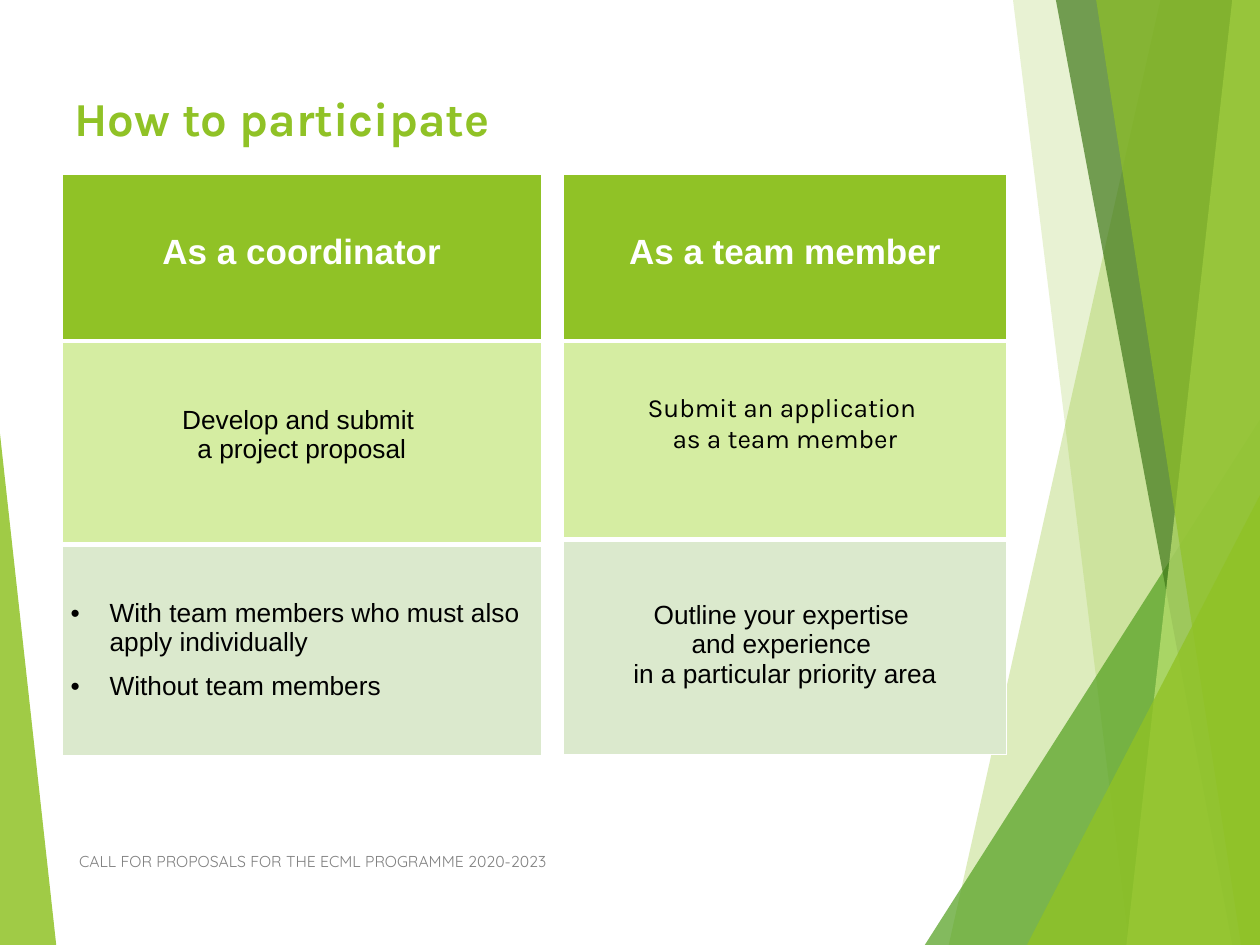
from dataclasses import dataclass

from lxml import etree
from pptx import Presentation
from pptx.dml.color import RGBColor
from pptx.enum.shapes import MSO_SHAPE
from pptx.enum.text import MSO_ANCHOR, MSO_AUTO_SIZE, PP_ALIGN
from pptx.oxml.ns import qn
from pptx.util import Inches, Pt

TRIANGLE = MSO_SHAPE.ISOSCELES_TRIANGLE
TOP, MIDDLE = MSO_ANCHOR.TOP, MSO_ANCHOR.MIDDLE
LEFT, CENTER = PP_ALIGN.LEFT, PP_ALIGN.CENTER
NO_AUTOFIT = MSO_AUTO_SIZE.NONE

WIDTH, HEIGHT = Inches(10), Inches(7.5)
TITLE_ONLY = 5
COLORS = {
    "lime": "90C226", "green": "54A021", "forest": "3F7819", "pale": "C0E474",
    "light": "D5EDA2", "mist": "DBE9CD", "white": "FFFFFF", "black": "000000",
    "gray": "808080",
}


@dataclass
class Band:
    """Strip from a slanted left edge to the right side, in percent of the slide."""
    top_x: float
    bottom_x: float
    color: str
    opacity: int


@dataclass
class Wedge:
    """Right triangle, in percent of the slide; apex is 0 (left) or 1 (right)."""
    left: float
    top: float
    width: float
    height: float
    apex: int
    color: str
    opacity: int


@dataclass
class Cell:
    paragraphs: list[str]
    fill: str
    font: str = "Arial"
    size: int = 15
    color: str = "black"
    bold: bool = False
    anchor: MSO_ANCHOR = MIDDLE
    margins: tuple[float, float] = (0.04, 0.04)  # top and bottom, inches
    bottom_line: float = 3
    bulleted: bool = False


@dataclass
class Column:
    left: float
    width: float
    header: str
    heights: tuple[float, float]
    cells: list[Cell]


BACKDROP = [
    Band(92.1, 75.3, "lime", 30),
    Band(80.4, 89.6, "lime", 20),
    Wedge(73.4, 44.4, 26.6, 55.6, 1, "green", 72),
    Band(83.8, 97.8, "forest", 70),
    Band(97.8, 89.4, "pale", 70),
    Band(87, 98.5, "lime", 65),
    Wedge(81.5, 52.4, 18.5, 47.6, 1, "lime", 80),
    Wedge(0, 45.87, 4.6, 55.73, 0, "lime", 85),
]
HEADER_TOP, HEADER_HEIGHT, BODY_TOP = 18.4, 17.73, 36.27
COLUMNS = [
    Column(4.9, 38.1, "As a coordinator", (21.33, 22.4), [
        Cell(["Develop and submit \na project proposal"], "light", margins=(0.04, 0.18)),
        Cell(["With team members who must also apply individually",
              "Without team members"], "mist", bottom_line=1, bulleted=True),
    ]),
    Column(44.7, 35.2, "As a team member", (20.8, 22.8), [
        Cell(["Submit an application \nas a team member"], "light", font="Karla",
             anchor=TOP, margins=(0.4, 0.04)),
        Cell(["Outline your expertise \nand experience \nin a particular priority area"],
             "mist", anchor=TOP, margins=(0.49, 0.04), bottom_line=1),
    ]),
]


def across(percent: float) -> int:
    return round(WIDTH * percent / 100)


def down(percent: float) -> int:
    return round(HEIGHT * percent / 100)


def rgb(name: str) -> RGBColor:
    return RGBColor.from_string(COLORS[name])


def style_font(font, name: str, size: float, color: str, bold: bool = False) -> None:
    font.name, font.size, font.bold = name, Pt(size), bold
    font.color.rgb = rgb(color)


def draw_backdrop_part(page, part: Band | Wedge) -> None:
    if isinstance(part, Band):
        builder = page.shapes.build_freeform(across(part.top_x), 0)
        builder.add_line_segments(
            [(WIDTH, 0), (WIDTH, HEIGHT), (across(part.bottom_x), HEIGHT)], close=True)
        shape = builder.convert_to_shape()
    else:
        shape = page.shapes.add_shape(TRIANGLE, across(part.left), down(part.top),
                                      across(part.width), down(part.height))
        shape.adjustments[0] = part.apex
    shape.shadow.inherit = False
    shape.line.fill.background()
    shape.fill.solid()
    shape.fill.fore_color.rgb = rgb(part.color)
    color = shape.fill._xPr.find(qn("a:solidFill"))[0]
    etree.SubElement(color, qn("a:alpha"), val=str(part.opacity * 1000))


def add_bullet(para) -> None:
    properties = para._p.get_or_add_pPr()
    properties.set("marL", str(Inches(0.31)))
    properties.set("indent", str(-Inches(0.31)))
    etree.SubElement(properties, qn("a:buFont"), typeface="Arial")
    etree.SubElement(properties, qn("a:buChar"), char="•")


def set_borders(table_cell, bottom_line: float) -> None:
    properties = table_cell._tc.get_or_add_tcPr()
    widths = {"lnL": 1, "lnR": 1, "lnT": 1, "lnB": bottom_line}
    for index, (tag, points) in enumerate(widths.items()):
        line = etree.Element(qn(f"a:{tag}"), w=str(Pt(points)))
        fill = etree.SubElement(line, qn("a:solidFill"))
        etree.SubElement(fill, qn("a:srgbClr"), val=COLORS["white"])
        properties.insert(index, line)


def fill_cell(table_cell, cell: Cell) -> None:
    table_cell.fill.solid()
    table_cell.fill.fore_color.rgb = rgb(cell.fill)
    table_cell.vertical_anchor = cell.anchor
    table_cell.margin_left = table_cell.margin_right = Inches(0.07)
    table_cell.margin_top, table_cell.margin_bottom = map(Inches, cell.margins)
    set_borders(table_cell, cell.bottom_line)
    frame = table_cell.text_frame
    for index, text in enumerate(cell.paragraphs):
        para = frame.add_paragraph() if index else frame.paragraphs[0]
        para.alignment = LEFT if cell.bulleted else CENTER
        if cell.bulleted:
            add_bullet(para)
            para.line_spacing = 1.5 if index else 1.0
        for number, line in enumerate(text.split("\n")):
            if number:
                para.add_line_break()
            span = para.add_run()
            span.text = line
            style_font(span.font, cell.font, cell.size, cell.color, cell.bold)


def draw_table(page, column: Column, top: float, heights, cells: list[Cell]) -> None:
    table = page.shapes.add_table(len(cells), 1, across(column.left), down(top),
                                  across(column.width), down(sum(heights))).table
    table.first_row = table.horz_banding = False
    for index, (height, cell) in enumerate(zip(heights, cells)):
        table.rows[index].height = down(height)
        fill_cell(table.cell(index, 0), cell)


def draw_column(page, column: Column) -> None:
    header = Cell([column.header], "lime", size=20, color="white", bold=True,
                  margins=(0.05, 0.13))
    draw_table(page, column, HEADER_TOP, [HEADER_HEIGHT], [header])
    draw_table(page, column, BODY_TOP, column.heights, column.cells)


def write_line(box, text: str, font: str, size: int, color: str, bold: bool = False) -> None:
    frame = box.text_frame
    frame.word_wrap = True
    frame.auto_size = NO_AUTOFIT
    frame.vertical_anchor = TOP
    para = frame.paragraphs[0]
    para.alignment = LEFT
    span = para.add_run()
    span.text = text
    style_font(span.font, font, size, color, bold)


def main() -> None:
    deck = Presentation()
    deck.slide_width, deck.slide_height = WIDTH, HEIGHT
    page = deck.slides.add_slide(deck.slide_layouts[TITLE_ONLY])
    for part in BACKDROP:
        draw_backdrop_part(page, part)
    footer = page.shapes.add_textbox(across(5.3), down(89.47), across(41.7), down(3.33))
    write_line(footer, "CALL FOR PROPOSALS FOR THE ECML PROGRAMME 2020-2023",
               "Quicksand", 9, "gray")
    title = page.shapes.title
    title.left, title.top = across(4.9), down(8.8)
    title.width, title.height = across(70.5), down(19.2)
    write_line(title, "How to participate", "Karla", 27, "lime", bold=True)
    for column in COLUMNS:
        draw_column(page, column)
    deck.save("out.pptx")


if __name__ == "__main__":
    main()
